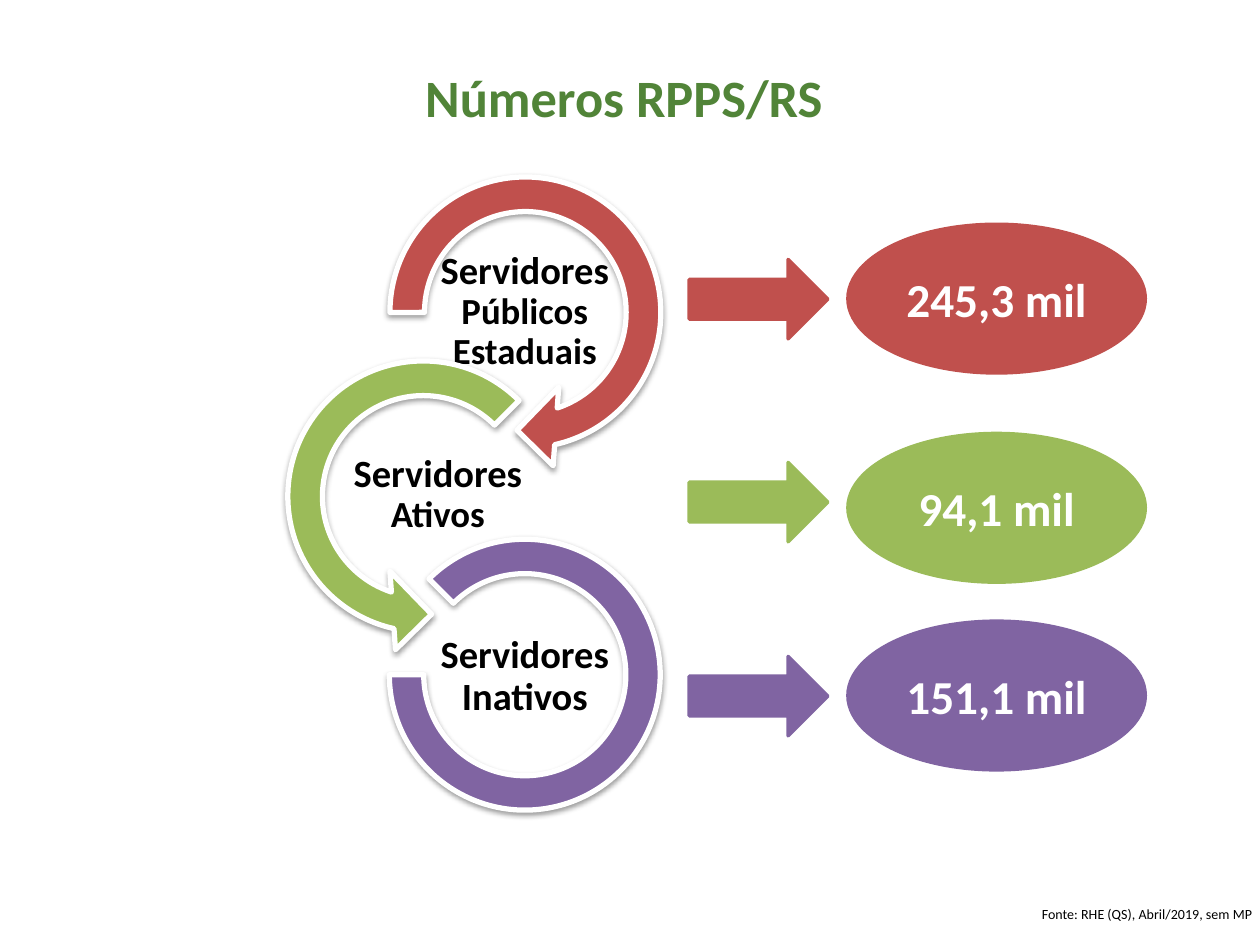
from dataclasses import dataclass

import pptx
import pptx.util
import pptx.dml.color
import pptx.enum.shapes
import pptx.enum.text
import pptx.oxml
import pptx.oxml.ns
from pptx.util import Inches

Kind = pptx.enum.shapes.MSO_SHAPE
Align = pptx.enum.text.PP_ALIGN
Anchor = pptx.enum.text.MSO_ANCHOR
Box = tuple[float, float, float, float]


@dataclass(frozen=True)
class Theme:
    font: str = "Calibri"
    red: str = "C0504D"
    lime: str = "9BBB59"
    plum: str = "8064A2"
    green: str = "518438"
    white: str = "FFFFFF"
    black: str = "000000"
    title: int = 30
    value: int = 27
    label: int = 22
    small: int = 21
    note: int = 8


@dataclass(frozen=True)
class Group:
    """One staff group: its ring and label, then its arrow and oval."""
    color: str
    kind: Kind
    ring: Box
    turns: tuple[float, ...]
    label: tuple[float, float]
    words: tuple[tuple[str, int], ...]
    arrow: float
    oval: float
    value: str


THEME = Theme()
GROUPS = (
    Group(THEME.red, Kind.CIRCULAR_ARROW, (2.92, 1.23, 2.5, 2.5),
          (0.11, 11.42, 45, 108, 0.125), (3.47, 2.13),
          (("Servidores", THEME.label), (" Públicos Estaduais", THEME.small)),
          2.06, 1.78, "245,3 mil"),
    Group(THEME.lime, Kind.LEFT_CIRCULAR_ARROW, (2.11, 2.69, 2.5, 2.5),
          (0.11, 11.42, 63, 189, 0.125), (2.78, 3.58),
          (("Servidores", THEME.label), (" Ativos", THEME.small)),
          3.67, 3.44, "94,1 mil"),
    Group(THEME.plum, Kind.BLOCK_ARC, (3.09, 4.28, 2.15, 2.15),
          (135, 108, 0.127), (3.47, 5.03),
          (("Servidores Inativos", THEME.label),),
          5.21, 4.93, "151,1 mil"),
)


def rgb(color: str) -> pptx.dml.color.RGBColor:
    return pptx.dml.color.RGBColor.from_string(color)


def style(font, size: int, color: str, bold: bool = True) -> None:
    font.name = THEME.font
    font.size = pptx.util.Pt(size)
    font.bold = bold
    font.color.rgb = rgb(color)


def shape(slide, kind: Kind, box: Box, fill: str, line: str, width: float):
    item = slide.shapes.add_shape(kind, *map(Inches, box))
    item.shadow.inherit = False
    item.fill.solid()
    item.fill.fore_color.rgb = rgb(fill)
    item.line.color.rgb = rgb(line)
    item.line.width = pptx.util.Pt(width)
    return item


def shade(item) -> None:
    """Give a shape a soft shadow just below it."""
    name = pptx.oxml.ns.qn("a:effectLst")
    item._element.spPr.find(name).append(pptx.oxml.parse_xml(
        f'<a:outerShdw {pptx.oxml.ns.nsdecls("a")} blurRad="40000" dist="20000"'
        ' dir="5400000" rotWithShape="0"><a:srgbClr val="000000">'
        '<a:alpha val="38000"/></a:srgbClr></a:outerShdw>'))


def text(slide, box: Box, words, color: str, bold: bool = True,
         align: Align = Align.CENTER, anchor: Anchor = Anchor.MIDDLE):
    """Add a box with one paragraph of (wording, size) runs."""
    frame = slide.shapes.add_textbox(*map(Inches, box)).text_frame
    frame.word_wrap = True
    frame.vertical_anchor = anchor
    para = frame.paragraphs[0]
    para.alignment = align
    for word, size in words:
        run = para.add_run()
        run.text = word
        style(run.font, size, color, bold)
    return frame


def ring(slide, group: Group) -> None:
    arc = shape(slide, group.kind, group.ring, group.color, THEME.white, 3)
    for i, turn in enumerate(group.turns):
        arc.adjustments[i] = turn
    shade(arc)
    frame = text(slide, (*group.label, 1.39, 0.69), group.words, THEME.black)
    frame.margin_left = frame.margin_right = Inches(0.02)
    frame.margin_top = frame.margin_bottom = Inches(0.02)
    frame.paragraphs[0].line_spacing = 0.9


def total(slide, group: Group) -> None:
    shape(slide, Kind.RIGHT_ARROW, (5.47, group.arrow, 1.1, 0.63),
          group.color, group.color, 2)
    oval = shape(slide, Kind.OVAL, (6.73, group.oval, 2.36, 1.18),
                 group.color, group.color, 2)
    frame = oval.text_frame
    frame.text = group.value
    frame.vertical_anchor = Anchor.MIDDLE
    para = frame.paragraphs[0]
    para.alignment = Align.CENTER
    style(para.runs[0].font, THEME.value, THEME.white)


def main() -> None:
    deck = pptx.Presentation()
    deck.slide_width, deck.slide_height = Inches(10), Inches(7.5)
    slide = deck.slides.add_slide(deck.slide_layouts[6])
    text(slide, (0.5, 0.14, 9, 1.25), [("Números RPPS/RS ", THEME.title)],
         THEME.green)
    for group in GROUPS:
        ring(slide, group)
    for group in GROUPS:
        total(slide, group)
    note = text(slide, (8.17, 7.14, 2.1, 0.24),
                [("Fonte: RHE (QS), Abril/2019, sem MP", THEME.note)],
                THEME.black, False, Align.LEFT, Anchor.TOP)
    note.auto_size = pptx.enum.text.MSO_AUTO_SIZE.SHAPE_TO_FIT_TEXT
    deck.save("out.pptx")


if __name__ == "__main__":
    main()
